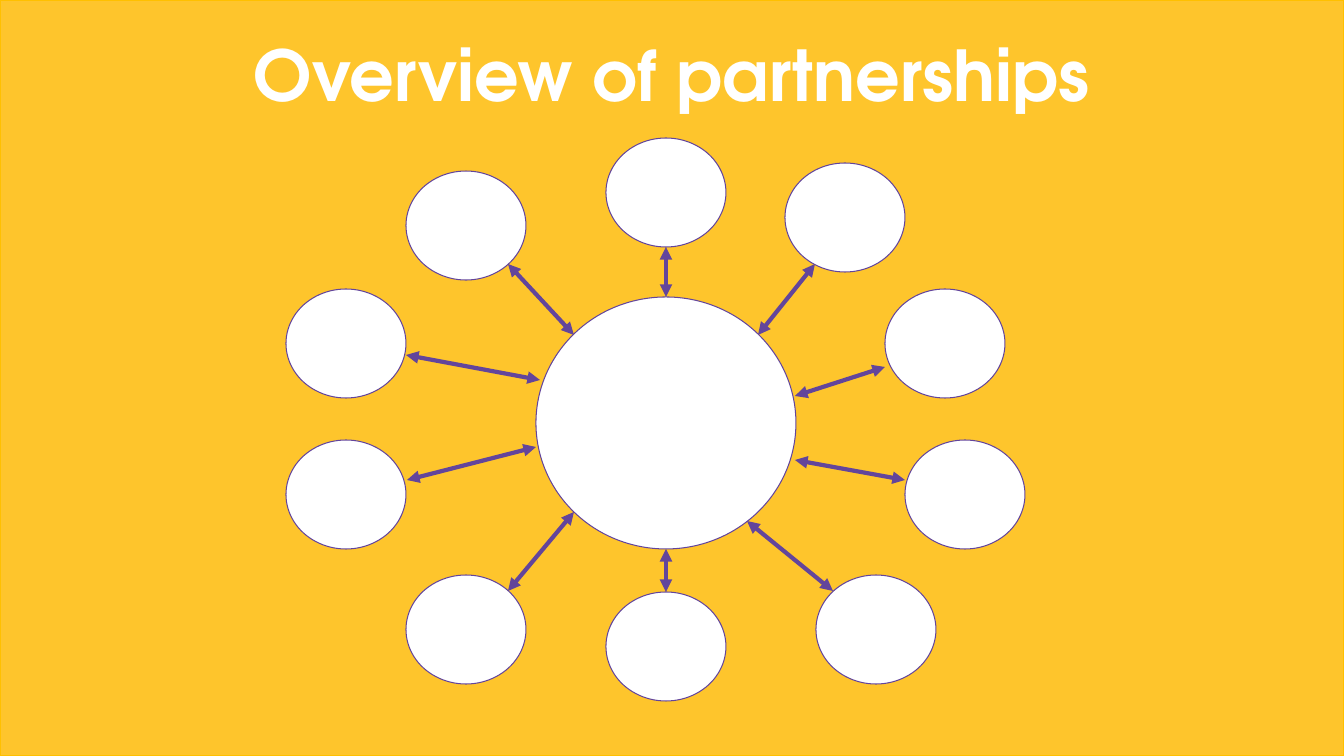
from lxml import etree
from pptx import Presentation
from pptx import util as u
from pptx.dml.color import RGBColor
from pptx.enum import shapes, text
from pptx.oxml.ns import qn

PX = 12192000 / 1344
WIDTH, HEIGHT = 1344, 756

WHITE = RGBColor(0xFF, 0xFF, 0xFF)
YELLOW = RGBColor(0xFE, 0xC5, 0x2C)
AMBER = RGBColor(0xFF, 0xC0, 0x00)
PURPLE = RGBColor(0x63, 0x45, 0x9B)

TITLE_FONT = {"name": "TeX Gyre Adventor", "size": u.Pt(50), "bold": True}

HUB = (250, 159, 260, 252)
PARTNER_SIZE = (120, 109)

# Per partner: circle corner, arrow end at the hub, arrow end at the partner
PARTNERS = [
    ((320, 0), (380, 159), (380, 109)),
    ((499, 25), (472, 197), (529, 126)),
    ((599, 151), (509, 258), (599, 229)),
    ((619, 302), (509, 322), (619, 342)),
    ((530, 437), (461, 383), (547, 453)),
    ((320, 454), (380, 411), (380, 454)),
    ((120, 437), (288, 374), (222, 453)),
    ((0, 302), (250, 309), (121, 342)),
    ((0, 151), (254, 242), (120, 217)),
    ((120, 33), (288, 197), (222, 126)),
]


def emu(*lengths):
    return [round(length * PX) for length in lengths]


def add_filled_shape(slide, kind, box, fill, line, line_width):
    shape = slide.shapes.add_shape(kind, *emu(*box))
    shape.shadow.inherit = False
    shape.fill.solid()
    shape.fill.fore_color.rgb = fill
    shape.line.color.rgb = line
    shape.line.width = u.Pt(line_width)


def add_double_arrow(slide, start, end):
    arrow = slide.shapes.add_connector(
        shapes.MSO_CONNECTOR.STRAIGHT, *emu(*start, *end))
    arrow.line.color.rgb = PURPLE
    arrow.line.width = u.Pt(3)
    outline = arrow.line._get_or_add_ln()
    for tag in ("a:headEnd", "a:tailEnd"):
        etree.SubElement(outline, qn(tag), type="triangle")
    etree.SubElement(arrow._element.spPr, qn("a:effectLst"))


def add_background(slide, box):
    add_filled_shape(slide, shapes.MSO_SHAPE.RECTANGLE, box, YELLOW, AMBER, 1)


def add_title(slide, box, wording):
    frame = slide.shapes.add_textbox(*emu(*box)).text_frame
    frame.word_wrap = True
    frame.auto_size = text.MSO_AUTO_SIZE.SHAPE_TO_FIT_TEXT
    paragraph = frame.paragraphs[0]
    paragraph.alignment = text.PP_ALIGN.CENTER
    run = paragraph.add_run()
    run.text = wording
    for name, value in TITLE_FONT.items():
        setattr(run.font, name, value)
    run.font.color.rgb = WHITE


def add_partnership_map(slide, left, top):
    """Place the hub, its ring of partners and the arrows between them."""
    def placed(x, y):
        return left + x, top + y

    circles = [HUB] + [corner + PARTNER_SIZE for corner, _, _ in PARTNERS]
    for x, y, width, height in circles:
        add_filled_shape(slide, shapes.MSO_SHAPE.OVAL,
                         (*placed(x, y), width, height), WHITE, PURPLE, 0.75)
    for _, hub_end, partner_end in PARTNERS:
        add_double_arrow(slide, placed(*hub_end), placed(*partner_end))


def main():
    presentation = Presentation()
    presentation.slide_width, presentation.slide_height = emu(WIDTH, HEIGHT)
    slide = presentation.slides.add_slide(presentation.slide_layouts[6])
    add_background(slide, (0, 0, WIDTH, HEIGHT))
    add_title(slide, (103, 27, 1138, 95), "Overview of partnerships")
    add_partnership_map(slide, 286, 138)
    presentation.save("out.pptx")


if __name__ == "__main__":
    main()
